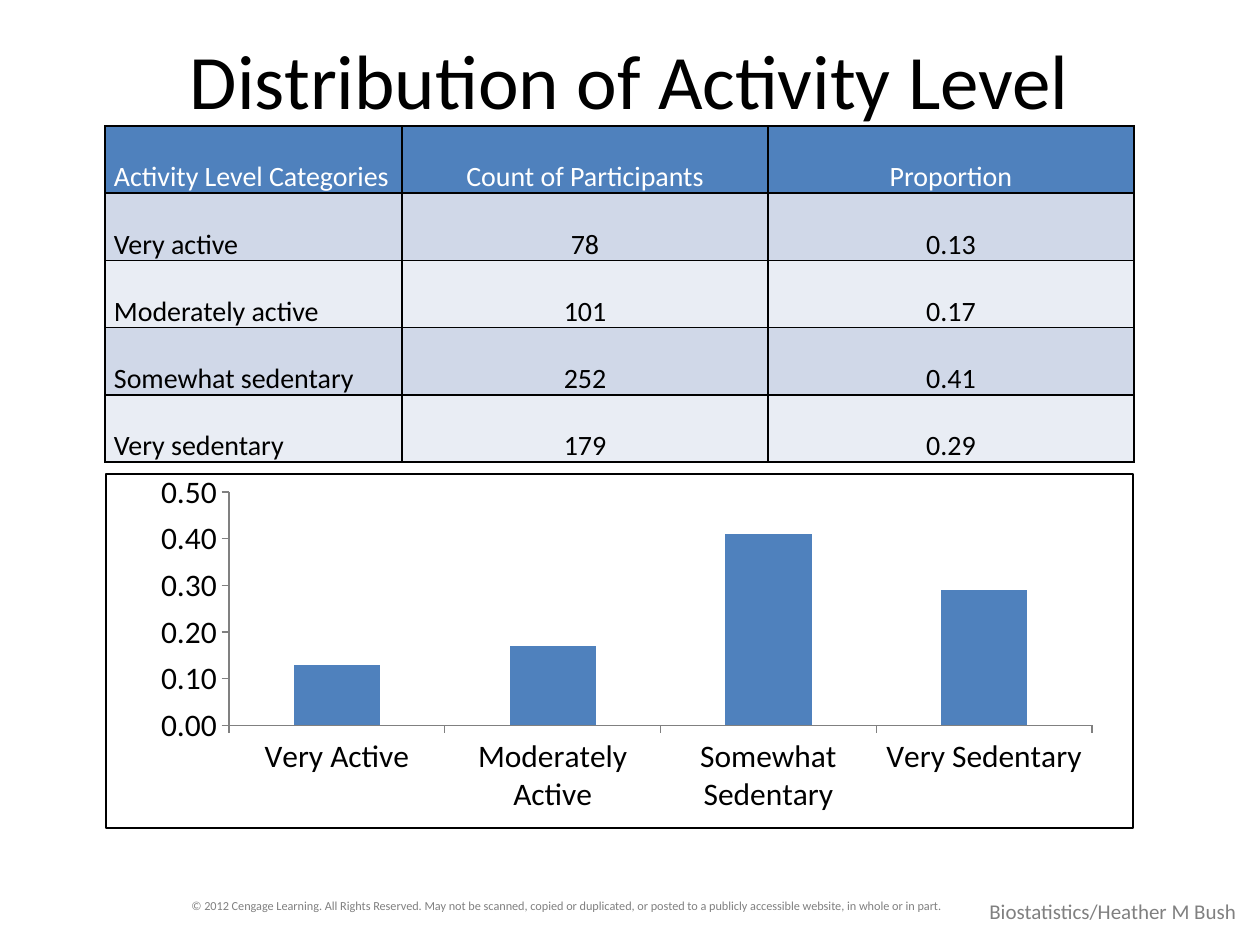
from lxml import etree
from pptx import Presentation
from pptx.chart.data import CategoryChartData
from pptx.dml.color import RGBColor
from pptx.enum.chart import XL_CHART_TYPE as ChartType, XL_TICK_MARK as TickMark
from pptx.enum.shapes import MSO_SHAPE as Shape
from pptx.enum.text import MSO_ANCHOR as Anchor, PP_ALIGN as Align
from pptx.oxml import parse_xml
from pptx.oxml.ns import nsdecls, qn
from pptx.util import Pt

PX = 914400 / 126
FONT = "Calibri"
BLACK, WHITE, GREY, BLUE = "000000", "FFFFFF", "808080", "4F81BD"
BANDS = ["D0D8E8", "E9EDF4"]
LINE_FILL = '<a:solidFill><a:srgbClr val="000000"/></a:solidFill>'

TABLE_ROWS = [
    ("Activity Level Categories", "Count of Participants", "Proportion"),
    ("Very active", "78", "0.13"),
    ("Moderately active", "101", "0.17"),
    ("Somewhat sedentary", "252", "0.41"),
    ("Very sedentary", "179", "0.29"),
]
PROPORTIONS = {
    "Very Active": 0.13,
    "Moderately Active": 0.17,
    "Somewhat Sedentary": 0.41,
    "Very Sedentary": 0.29,
}
COPYRIGHT = (
    "© 2012 Cengage Learning. All Rights Reserved. May not be scanned, copied or "
    "duplicated, or posted to a publicly accessible website, in whole or in part."
)


def emu(*lengths):
    return [round(length * PX) for length in lengths]


def color(hex_value):
    return RGBColor.from_string(hex_value)


def style_font(font, size, hex_value):
    font.name = FONT
    font.size = Pt(size)
    font.color.rgb = color(hex_value)


def write(frame, text, size, hex_value, align=Align.LEFT):
    para = frame.paragraphs[0]
    para.text = text
    para.alignment = align
    style_font(para.font, size, hex_value)
    return para


def add_footer(page, left, top):
    notice = page.shapes.add_shape(Shape.RECTANGLE, *emu(left, top, 798, 28))
    notice.shadow.inherit = False
    notice.fill.solid()
    notice.fill.fore_color.rgb = color(WHITE)
    notice.line.fill.background()
    notice.text_frame.vertical_anchor = Anchor.TOP
    write(notice.text_frame, COPYRIGHT, 7, GREY)

    author = page.shapes.add_textbox(*emu(left + 798, top, 275, 38))
    author.text_frame.word_wrap = False
    write(author.text_frame, "Biostatistics/Heather M Bush", 12, GREY)


def add_title(page, left, top, width, height):
    title = page.shapes.title
    title.left, title.top, title.width, title.height = emu(left, top, width, height)
    title.text_frame.vertical_anchor = Anchor.MIDDLE
    write(title.text_frame, "Distribution of Activity Level", 44, BLACK, Align.CENTER)


def add_borders(cell):
    properties = cell._tc.get_or_add_tcPr()
    for index, side in enumerate(("lnL", "lnR", "lnT", "lnB")):
        line = parse_xml(f'<a:{side} {nsdecls("a")} w="12700">{LINE_FILL}</a:{side}>')
        properties.insert(index, line)


def add_activity_table(page, left, top, column_widths, row_height):
    box = emu(left, top, sum(column_widths), row_height * len(TABLE_ROWS))
    table = page.shapes.add_table(len(TABLE_ROWS), len(column_widths), *box).table
    for column, width in zip(table.columns, emu(*column_widths)):
        column.width = width
    for row_index, texts in enumerate(TABLE_ROWS):
        table.rows[row_index].height = emu(row_height)[0]
        header = row_index == 0
        for column_index, text in enumerate(texts):
            cell = table.cell(row_index, column_index)
            cell.fill.solid()
            cell.fill.fore_color.rgb = color(BLUE if header else BANDS[(row_index - 1) % 2])
            cell.vertical_anchor = Anchor.MIDDLE
            cell.margin_left, cell.margin_right = emu(9, 9)
            cell.margin_top = cell.margin_bottom = 0
            align = Align.CENTER if column_index else Align.LEFT
            para = write(cell.text_frame, text, 16, WHITE if header else BLACK, align)
            para.line_spacing = 2.0
            para.font.bold = False
            add_borders(cell)


def frame_chart(chart):
    """Give the chart a white ground with a black outline."""
    properties = parse_xml(
        f'<c:spPr {nsdecls("c", "a")}><a:solidFill><a:srgbClr val="{WHITE}"/></a:solidFill>'
        f'<a:ln w="12700">{LINE_FILL}</a:ln></c:spPr>'
    )
    chart.element.find(qn("c:chart")).addnext(properties)


def place_plot(chart, **fractions):
    """Set the inner plot area as fractions of the chart."""
    plot_area = chart.element.find(".//" + qn("c:plotArea"))
    for old_layout in plot_area.findall(qn("c:layout")):
        plot_area.remove(old_layout)
    layout = etree.Element(qn("c:layout"))
    manual = etree.SubElement(layout, qn("c:manualLayout"))
    settings = {"layoutTarget": "inner", "xMode": "edge", "yMode": "edge", **fractions}
    for name, value in settings.items():
        etree.SubElement(manual, qn(f"c:{name}")).set("val", str(value))
    plot_area.insert(0, layout)


def add_proportion_chart(page, left, top, width, height):
    data = CategoryChartData(number_format="0.00")
    data.categories = list(PROPORTIONS)
    data.add_series("Series 1", list(PROPORTIONS.values()))
    box = emu(left, top, width, height)
    chart = page.shapes.add_chart(ChartType.COLUMN_CLUSTERED, *box, data).chart
    chart.has_title = chart.has_legend = False
    style_font(chart.font, 18, BLACK)

    plot = chart.plots[0]
    plot.gap_width = 150
    plot.vary_by_categories = False
    bars = plot.series[0].format.fill
    bars.solid()
    bars.fore_color.rgb = color(BLUE)

    for axis in (chart.category_axis, chart.value_axis):
        axis.has_major_gridlines = False
        axis.major_tick_mark = TickMark.OUTSIDE
        axis.minor_tick_mark = TickMark.NONE
        axis.format.line.color.rgb = color(GREY)
        axis.format.line.width = Pt(0.75)
    values = chart.value_axis
    values.minimum_scale, values.maximum_scale, values.major_unit = 0, 0.5, 0.1
    values.tick_labels.number_format = "0.00"
    values.tick_labels.number_format_is_linked = False

    place_plot(chart, x=0.12, y=0.05, w=0.84, h=0.66)
    frame_chart(chart)


def main():
    deck = Presentation()
    deck.slide_width, deck.slide_height = emu(1260, 945)
    page = deck.slides.add_slide(deck.slide_layouts[5])
    add_footer(page, 179, 892)
    add_title(page, 63, 0, 1134, 158)
    add_activity_table(page, 105, 126, [297, 366, 366], 66)
    add_proportion_chart(page, 105, 473, 1029, 356)
    deck.save("out.pptx")


if __name__ == "__main__":
    main()
